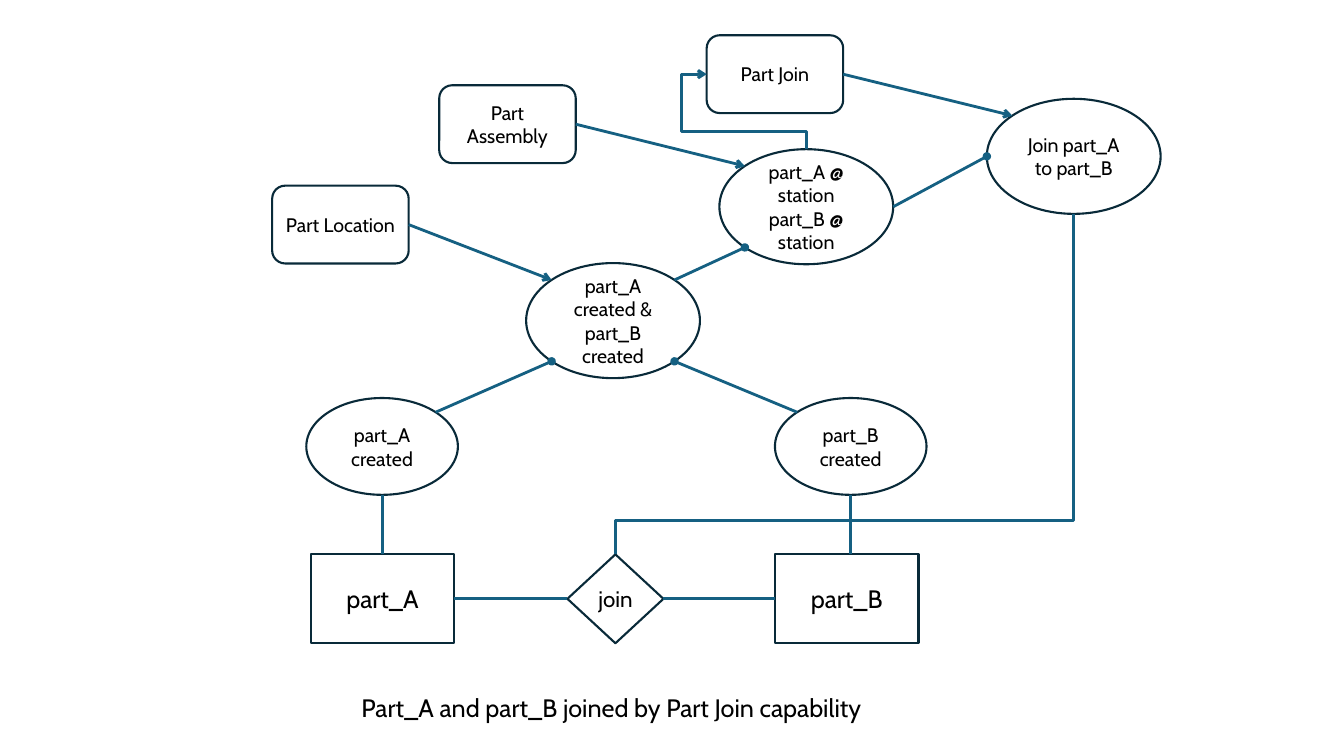
from lxml import etree
from pptx import Presentation
from pptx import util as u
from pptx.dml.color import RGBColor
from pptx.enum import shapes, text
from pptx.oxml import ns

INK = RGBColor(0x09, 0x2A, 0x39)
LINK = RGBColor(0x15, 0x60, 0x82)
WHITE = RGBColor(0xFF, 0xFF, 0xFF)
BLACK = RGBColor(0x00, 0x00, 0x00)

KIND = shapes.MSO_SHAPE
DIAGONAL = 0.5 ** 0.5
# Site name: horizontal and vertical direction from the centre
SITES = {"top": (0, -1), "left": (-1, 0), "bottom": (0, 1), "right": (1, 0),
         "top left": (-1, -1), "bottom left": (-1, 1),
         "bottom right": (1, 1), "top right": (1, -1)}
FOUR_SITES = ["top", "left", "bottom", "right"]
EIGHT_SITES = ["top", "top left", "left", "bottom left",
               "bottom", "bottom right", "right", "top right"]


def site_point(shape, site):
    """Return the point of a connection site on the shape's outline."""
    across, down = SITES[site]
    reach = DIAGONAL if across and down else 1
    return (round(shape.left + shape.width * (1 + across * reach) / 2),
            round(shape.top + shape.height * (1 + down * reach) / 2))


def add_element(parent, tag, **attributes):
    return etree.SubElement(parent, ns.qn(tag), attributes)


def set_all(target, values):
    for name, value in values.items():
        setattr(target, name, value)


class Diagram:
    font_name = "Cabin"
    outline_width = u.Pt(1.5)
    link_width = u.Pt(2)

    def __init__(self, slide):
        self.slide = slide

    def fill_text(self, frame, lines, size, align, **frame_format):
        set_all(frame, frame_format)
        for number, line in enumerate(lines):
            paragraph = frame.add_paragraph() if number else frame.paragraphs[0]
            paragraph.text = line
            paragraph.alignment = align
            set_all(paragraph.font, {"name": self.font_name, "size": u.Pt(size)})
            paragraph.font.color.rgb = BLACK

    def node(self, kind, size, left, top, *lines, points=14, **frame_format):
        width, height = size
        shape = self.slide.shapes.add_shape(
            kind, u.Cm(left), u.Cm(top), u.Cm(width), u.Cm(height))
        shape.shadow.inherit = False
        shape.fill.solid()
        shape.fill.fore_color.rgb = WHITE
        shape.line.color.rgb = INK
        shape.line.width = self.outline_width
        self.fill_text(shape.text_frame, lines, points, text.PP_ALIGN.CENTER,
                       word_wrap=True, vertical_anchor=text.MSO_ANCHOR.MIDDLE,
                       **frame_format)
        return shape

    def caption(self, left, top, width, height, line):
        box = self.slide.shapes.add_textbox(
            u.Cm(left), u.Cm(top), u.Cm(width), u.Cm(height))
        self.fill_text(box.text_frame, [line], 18, text.PP_ALIGN.LEFT,
                       word_wrap=False,
                       auto_size=text.MSO_AUTO_SIZE.SHAPE_TO_FIT_TEXT)

    def line(self, begin, end, tip=None, kind=shapes.MSO_CONNECTOR.STRAIGHT):
        connector = self.slide.shapes.add_connector(kind, *begin, *end)
        connector.line.color.rgb = LINK
        connector.line.width = self.link_width
        properties = connector._element.spPr
        if tip:
            add_element(properties.find(ns.qn("a:ln")), "a:tailEnd", type=tip)
        add_element(properties, "a:effectLst")
        return connector

    def link(self, source, source_site, target, target_site, tip=None):
        """Draw a straight line glued to a site on each shape."""
        connector = self.line(site_point(source, source_site),
                              site_point(target, target_site), tip)
        glue = connector._element.find(".//" + ns.qn("p:cNvCxnSpPr"))
        for tag, shape, site in (("a:stCxn", source, source_site),
                                 ("a:endCxn", target, target_site)):
            is_round = shape.auto_shape_type == KIND.OVAL
            sites = EIGHT_SITES if is_round else FOUR_SITES
            add_element(glue, tag, id=str(shape.shape_id),
                        idx=str(sites.index(site)))

    def elbow(self, begin, end, rotation, bends, tip=None):
        """Draw a bent line whose frame is turned by 90 or 270 degrees."""
        turn = 1 if rotation == 90 else -1
        middle_x, middle_y = (begin[0] + end[0]) / 2, (begin[1] + end[1]) / 2
        half_x = turn * (begin[1] - middle_y)
        half_y = -turn * (begin[0] - middle_x)
        connector = self.line(
            (round(middle_x + half_x), round(middle_y + half_y)),
            (round(middle_x - half_x), round(middle_y - half_y)),
            tip, shapes.MSO_CONNECTOR.ELBOW)
        properties = connector._element.spPr
        properties.find(ns.qn("a:xfrm")).set("rot", str(rotation * 60000))
        geometry = properties.find(ns.qn("a:prstGeom"))
        geometry.set("prst", f"bentConnector{len(bends) + 2}")
        guides = geometry.find(ns.qn("a:avLst"))
        for number, bend in enumerate(bends, 1):
            add_element(guides, "a:gd", name=f"adj{number}",
                        fmla=f"val {round(bend * 100000)}")


def main():
    presentation = Presentation()
    set_all(presentation, {"slide_width": u.Cm(33.87), "slide_height": u.Cm(19.05)})
    diagram = Diagram(presentation.slides.add_slide(presentation.slide_layouts[6]))
    node, link = diagram.node, diagram.link

    # Parts and their relation
    part_size, part_top = (3.62, 2.24), 13.97
    part_a = node(KIND.RECTANGLE, part_size, 7.83, part_top, "part_A", points=18)
    part_b = node(KIND.RECTANGLE, part_size, 19.53, part_top, "part_B", points=18)
    join = node(KIND.DIAMOND, (2.42, 2.24), 14.3, part_top, "join", points=16,
                margin_left=0, margin_right=0)

    # States
    small, large = (3.82, 2.44), (4.38, 2.9)
    a_created = node(KIND.OVAL, small, 7.72, 10.03, "part_A created")
    b_created = node(KIND.OVAL, small, 19.53, 10.03, "part_B created")
    both_created = node(KIND.OVAL, large, 13.26, 6.63,
                        "part_A created & part_B created")
    at_station = node(KIND.OVAL, large, 18.13, 3.76,
                      "part_A @ station", "part_B @ station")
    joined = node(KIND.OVAL, large, 24.87, 2.49, "Join part_A to part_B")

    # Capabilities
    box = (3.44, 1.96)
    location = node(KIND.ROUNDED_RECTANGLE, box, 6.86, 4.68, "Part Location")
    assembly = node(KIND.ROUNDED_RECTANGLE, box, 11.07, 2.15, "Part Assembly")
    part_join = node(KIND.ROUNDED_RECTANGLE, box, 17.81, 0.89, "Part Join")

    # Plain links between parts and states
    link(join, "left", part_a, "right")
    link(part_b, "left", join, "right")
    for part, state in ((part_a, a_created), (part_b, b_created)):
        foot = site_point(state, "bottom")
        diagram.line((foot[0], part.top), foot)

    # Dotted links from one state to the next
    link(a_created, "top right", both_created, "bottom left", "oval")
    link(b_created, "top left", both_created, "bottom right", "oval")
    link(both_created, "top right", at_station, "bottom left", "oval")
    link(at_station, "right", joined, "left", "oval")

    # Arrows from capabilities to states
    for capability, state in ((location, both_created), (assembly, at_station),
                              (part_join, joined)):
        link(capability, "right", state, "top left", "arrow")

    # Bent links
    diagram.elbow(site_point(join, "top"), site_point(joined, "bottom"),
                  90, [0.1])
    diagram.elbow(site_point(at_station, "top"), site_point(part_join, "left"),
                  270, [0.24, 1.25], "arrow")

    diagram.caption(8.86, 17.32, 13.31, 1.02,
                    "Part_A and part_B joined by Part Join capability")
    presentation.save("out.pptx")


if __name__ == "__main__":
    main()
